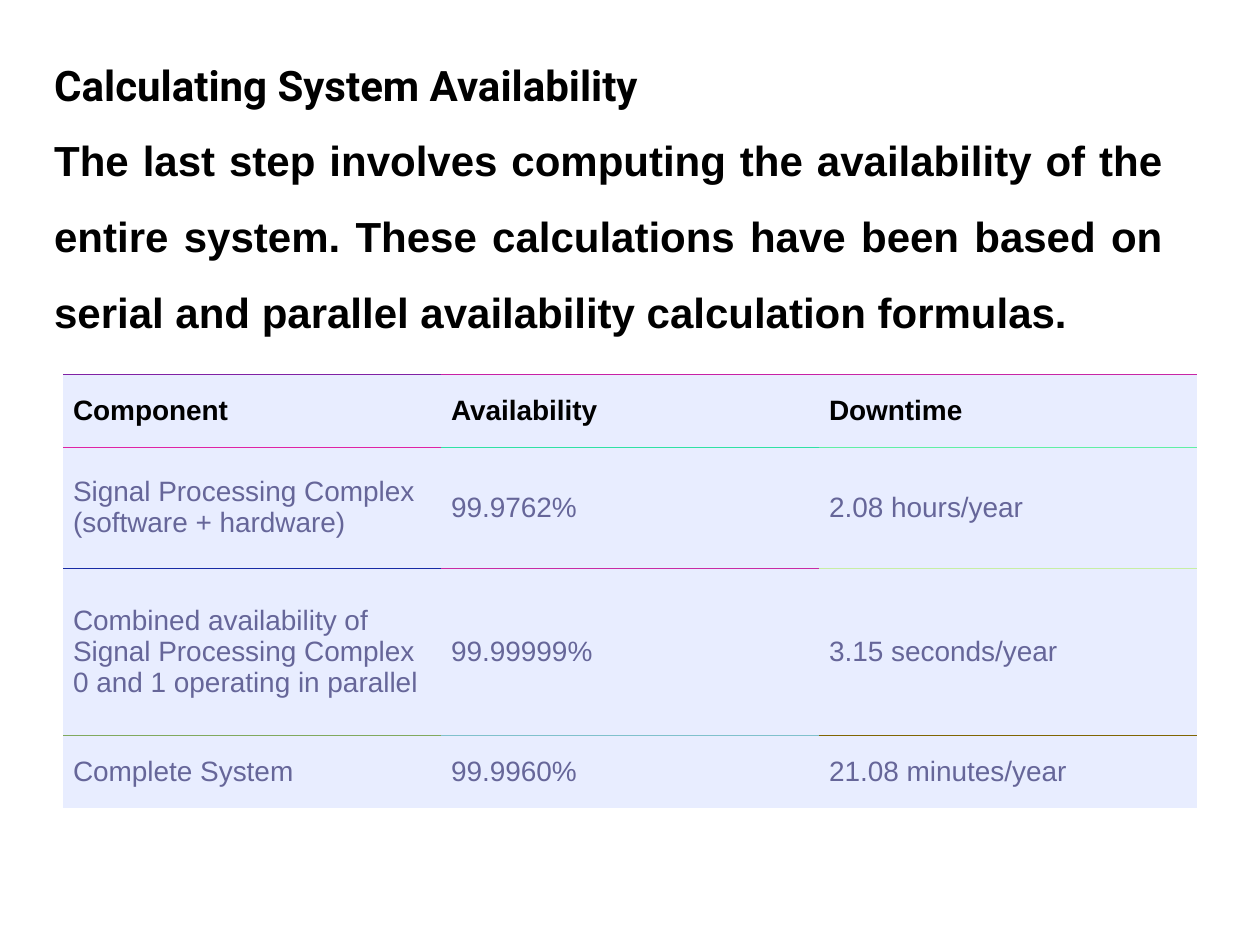
from dataclasses import dataclass

from pptx import Presentation
from pptx.dml.color import RGBColor
from pptx.enum import text
from pptx.oxml import xmlchemy as x
from pptx.util import Inches, Pt


@dataclass(frozen=True)
class Theme:
    """Colours, fonts and type sizes of the slide."""
    ink: str = "000000"
    muted: str = "666699"
    cell: str = "E8EDFF"
    heading_font: str = "Roboto"
    font: str = "Arial"
    body_size: int = 24
    table_size: int = 16
    rule_width: float = 0.75


THEME = Theme()
HEADING = "Calculating System Availability"
BODY = (
    "The last step involves computing the availability of the entire system. "
    "These calculations have been based on serial and parallel availability "
    "calculation formulas."
)
ROWS = [
    ("Component", "Availability", "Downtime"),
    ("Signal Processing Complex (software + hardware)", "99.9762%", "2.08 hours/year"),
    ("Combined availability of Signal Processing Complex 0 and 1 operating in parallel",
     "99.99999%", "3.15 seconds/year"),
    ("Complete System", "99.9960%", "21.08 minutes/year"),
]
ROW_HEIGHTS = (0.58, 0.96, 1.33, 0.58)
RULES = [
    ("8022A5", "C821A5", "C826A5"),
    ("E023A5", "30E1A4", "60EFA4"),
    ("182BA5", "C82BA5", "C8EEA4"),
    ("80A95E", "80C1CC", "806502"),
    ("FFFFFF", "FFFFFF", "FFFFFF"),
]


def style(p, font, size, color, bold):
    """Format every run of a paragraph."""
    for r in p.runs:
        r.font.name, r.font.size, r.font.bold = font, Pt(size), bold
        r.font.color.rgb = RGBColor.from_string(color)


def add_rule(cell, edge, color):
    """Draw one horizontal border of a cell, edge being lnT or lnB."""
    ln = x.OxmlElement(f"a:{edge}")
    ln.set("w", str(Pt(THEME.rule_width)))
    fill = x.OxmlElement("a:solidFill")
    rgb = x.OxmlElement("a:srgbClr")
    rgb.set("val", color)
    fill.append(rgb)
    ln.append(fill)
    cell._tc.get_or_add_tcPr().append(ln)


def fill_body(sp, left, top, width, height):
    """Place the heading and the explanation in the body placeholder."""
    sp.left, sp.top, sp.width, sp.height = map(Inches, (left, top, width, height))
    tf = sp.text_frame
    tf.text = f"{HEADING}\n{BODY}"
    for p, font in zip(tf.paragraphs, (THEME.heading_font, THEME.font)):
        pPr = p._p.get_or_add_pPr()
        pPr.set("marL", "0")
        pPr.set("indent", "0")
        pPr.append(x.OxmlElement("a:buNone"))
        p.line_spacing, p.space_before = 1.5, Pt(0)
        style(p, font, THEME.body_size, THEME.ink, True)
    tf.paragraphs[1].alignment = text.PP_ALIGN.JUSTIFY


def add_availability_table(s, left, top, width, height):
    """Add the table of component availability and downtime."""
    frame = s.shapes.add_table(len(ROWS), len(ROWS[0]),
                               *map(Inches, (left, top, width, height)))
    table = frame.table
    table.horz_banding = False
    for i, (row, row_height) in enumerate(zip(ROWS, ROW_HEIGHTS)):
        table.rows[i].height = Inches(row_height)
        for j, value in enumerate(row):
            cell = table.cell(i, j)
            cell.text = value
            cell.vertical_anchor = text.MSO_ANCHOR.MIDDLE
            cell.margin_left = cell.margin_right = Inches(0.08)
            cell.margin_top = cell.margin_bottom = Inches(0.08)
            add_rule(cell, "lnT", RULES[i][j])
            add_rule(cell, "lnB", RULES[i + 1][j])
            cell.fill.solid()
            cell.fill.fore_color.rgb = RGBColor.from_string(THEME.cell)
            style(cell.text_frame.paragraphs[0], THEME.font, THEME.table_size,
                  THEME.muted if i else THEME.ink, i == 0)
    no_style = "{2D5ABB26-0587-4C30-8999-92F81FD0307C}"
    table._tbl.tblPr.find(
        "{http://schemas.openxmlformats.org/drawingml/2006/main}tableStyleId"
    ).text = no_style


def main():
    """Build and save the presentation."""
    prs = Presentation()
    prs.slide_width, prs.slide_height = Inches(10), Inches(7.5)
    s = prs.slides.add_slide(prs.slide_layouts[1])
    title = s.shapes.title
    title._element.getparent().remove(title._element)
    fill_body(s.placeholders[1], 0.33, 0.22, 9, 4.95)
    add_availability_table(s, 0.5, 2.97, 9, sum(ROW_HEIGHTS))
    prs.save("out.pptx")


if __name__ == "__main__":
    main()
